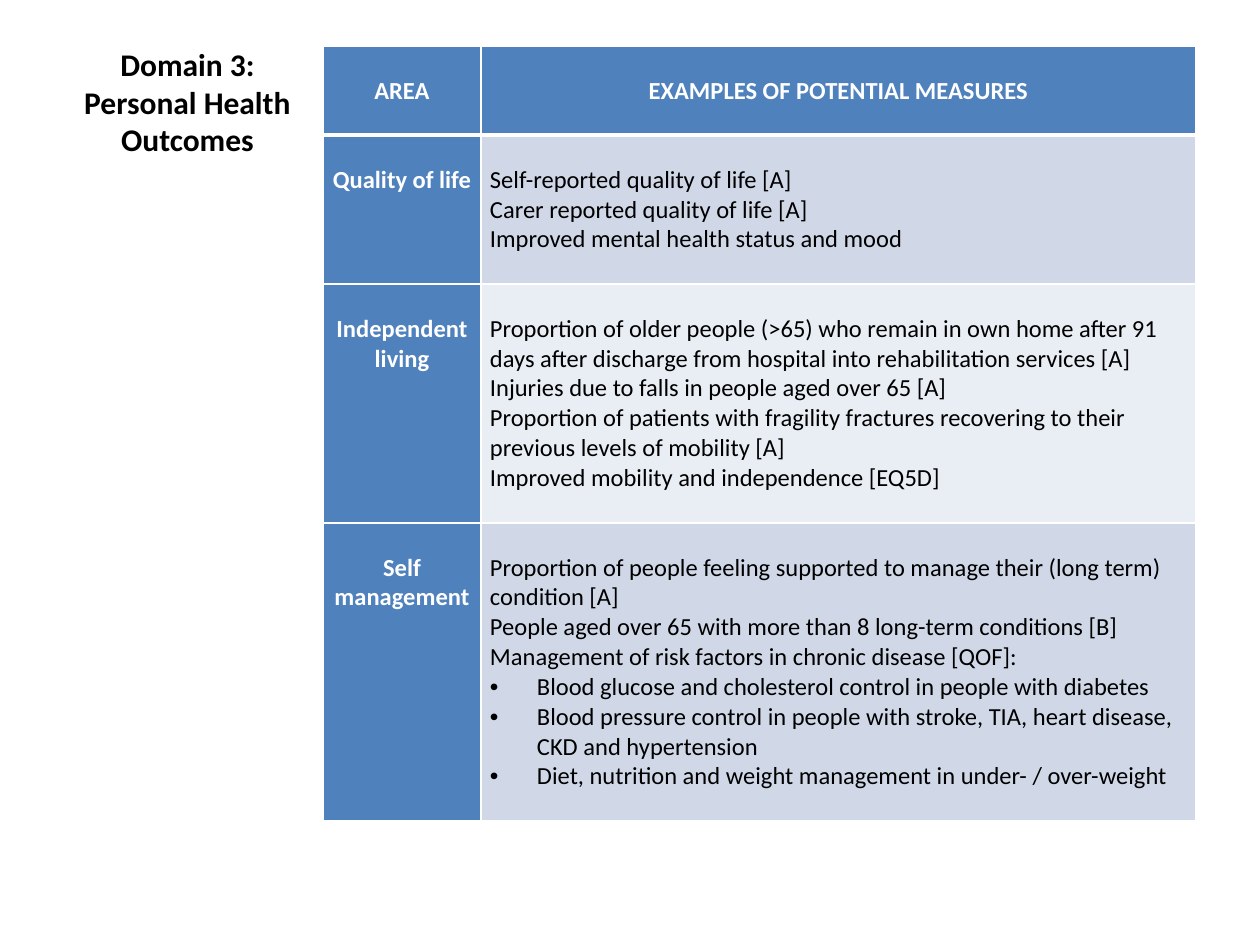
from lxml.etree import SubElement
from pptx import Presentation
from pptx.dml.color import RGBColor as RGB
from pptx.enum.text import MSO_ANCHOR as ANCHOR, PP_ALIGN as ALIGN
from pptx.oxml import parse_xml
from pptx.oxml.ns import nsdecls, qn
from pptx.util import Pt

PX = 914400 / 126
COLORS = {"blue": "4F81BD", "band1": "D0D8E8", "band2": "E9EDF4",
          "white": "FFFFFF", "black": "000000"}
BULLET = "• "


def px(n):
    return round(n * PX)


def write(p, text, size, color, bold, align):
    p.alignment = align
    r = p.add_run()
    r.text = text
    font = {"name": "Calibri", "size": Pt(size), "bold": bold}
    for key, value in font.items():
        setattr(r.font, key, value)
    r.font.color.rgb = RGB.from_string(COLORS[color])


prs = Presentation()
prs.slide_width, prs.slide_height = px(1260), px(945)
s = prs.slides.add_slide(prs.slide_layouts[5])

title = s.shapes.title
box = {"left": 63, "top": 38, "width": 249, "height": 127}
for key, value in box.items():
    setattr(title, key, px(value))
tf = title.text_frame
tf.word_wrap = True
tf.vertical_anchor = ANCHOR.MIDDLE
write(tf.paragraphs[0], "Domain 3: Personal Health Outcomes", 18, "black", True, ALIGN.CENTER)

rows = [
    (["AREA"], ["EXAMPLES OF POTENTIAL MEASURES"]),
    (["Quality of life"],
     ["Self-reported quality of life [A]",
      "Carer reported quality of life [A]",
      "Improved mental health status and mood"]),
    (["Independent living"],
     ["Proportion of older people (>65) who remain in own home after 91 days "
      "after discharge from hospital into rehabilitation services [A]",
      "Injuries due to falls in people aged over 65 [A]",
      "Proportion of patients with fragility fractures recovering to their "
      "previous levels of mobility [A]",
      "Improved mobility and independence [EQ5D]"]),
    (["Self", "management"],
     ["Proportion of people feeling supported to manage their (long term) condition [A]",
      "People aged over 65 with more than 8 long-term conditions [B]",
      "Management of risk factors in chronic disease [QOF]:",
      BULLET + "Blood glucose and cholesterol control in people with diabetes",
      BULLET + "Blood pressure control in people with stroke, TIA, heart disease, "
      "CKD and hypertension",
      BULLET + "Diet, nutrition and weight management in under- / over-weight"]),
]
widths = [158, 715]
heights = [89, 149, 239, 297]
margins = {"margin_left": 9, "margin_right": 9, "margin_top": 30, "margin_bottom": 29}

frame = s.shapes.add_table(len(rows), 2, px(323), px(46), px(sum(widths)), px(sum(heights)))
table = frame.table
table.first_col = True
for col, width in zip(table.columns, widths):
    col.width = px(width)
for row, height in zip(table.rows, heights):
    row.height = px(height)

for i, row in enumerate(rows):
    for j, lines in enumerate(row):
        cell = table.cell(i, j)
        heading = i == 0 or j == 0
        fill = "blue" if heading else "band1" if i % 2 else "band2"
        cell.fill.solid()
        cell.fill.fore_color.rgb = RGB.from_string(COLORS[fill])
        cell.vertical_anchor = ANCHOR.TOP
        for key, value in margins.items():
            setattr(cell, key, px(value))
        tcPr = cell._tc.get_or_add_tcPr()
        for k, side in enumerate("LRTB"):
            thick = (i, side) in ((0, "B"), (1, "T"))
            tcPr.insert(k, parse_xml(
                f'<a:ln{side} {nsdecls("a")} w="{Pt(3 if thick else 1)}"><a:solidFill>'
                f'<a:srgbClr val="{COLORS["white"]}"/></a:solidFill></a:ln{side}>'))
        tf = cell.text_frame
        for k, line in enumerate(lines):
            p = tf.add_paragraph() if k else tf.paragraphs[0]
            write(p, line.removeprefix(BULLET), 14, "white" if heading else "black",
                  heading, ALIGN.CENTER if heading else ALIGN.LEFT)
            if line.startswith(BULLET):
                pPr = p._p.get_or_add_pPr()
                pPr.set("marL", str(px(47)))
                pPr.set("indent", str(px(-47)))
                SubElement(pPr, qn("a:buFont"), typeface="Arial")
                SubElement(pPr, qn("a:buChar"), char="•")

prs.save("out.pptx")
